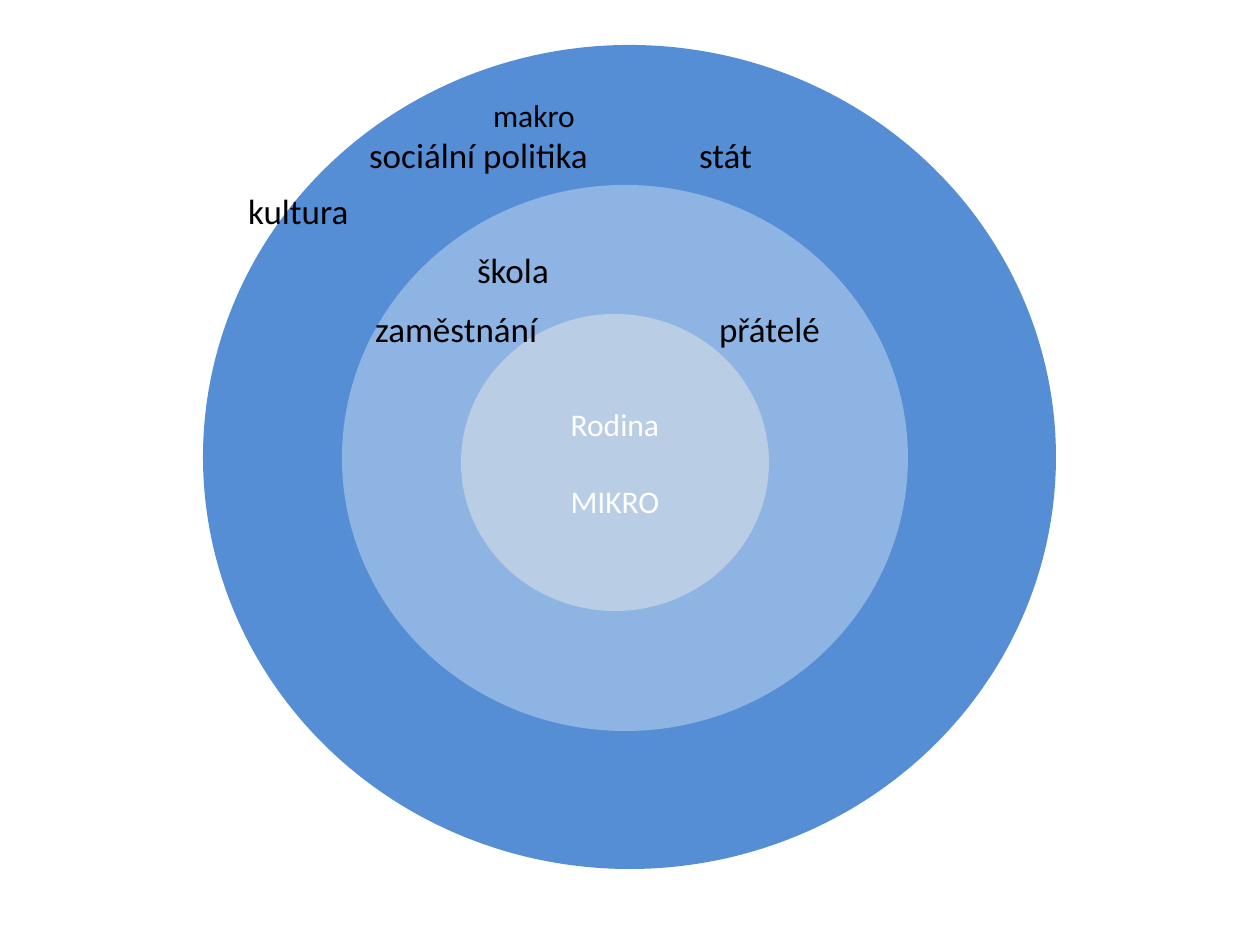
from lxml.etree import SubElement
from pptx import Presentation
from pptx.dml.color import RGBColor
from pptx.enum.shapes import MSO_SHAPE
from pptx.enum.text import MSO_ANCHOR, PP_ALIGN
from pptx.oxml.ns import qn
from pptx.util import Emu, Pt

PX_PER_INCH = 126


def px(length):
    return Emu(round(length * 914400 / PX_PER_INCH))


def color(hex_string):
    return RGBColor.from_string(hex_string)


class SlideBuilder:
    font_name = "Calibri"

    def __init__(self, slide):
        self.slide = slide

    def style(self, paragraph, size, hex_color, space_before=0):
        paragraph.space_before = Pt(space_before)
        paragraph.font.name = self.font_name
        paragraph.font.size = Pt(size)
        paragraph.font.color.rgb = color(hex_color)

    def circle(self, left, top, width, height, fill):
        circle = self.slide.shapes.add_shape(
            MSO_SHAPE.OVAL, px(left), px(top), px(width), px(height))
        circle.shadow.inherit = False
        circle.fill.solid()
        circle.fill.fore_color.rgb = color(fill)
        circle.line.fill.background()
        return circle

    def circle_label(self, circle, words, size, hex_color, gap):
        """Centre the words in the circle, one below the other, gap in points."""
        frame = circle.text_frame
        frame.vertical_anchor = MSO_ANCHOR.MIDDLE
        for index, word in enumerate(words):
            paragraph = frame.paragraphs[0] if index == 0 else frame.add_paragraph()
            paragraph.text = word
            paragraph.alignment = PP_ALIGN.CENTER
            self.style(paragraph, size, hex_color, gap if index else 0)

    def tabbed_text(self, left, top, width, height, lines, hex_color):
        """Write lines of (size, space before, {word: x on the slide})."""
        frame = self.slide.shapes.add_textbox(
            px(left), px(top), px(width), px(height)).text_frame
        frame.word_wrap = True
        frame.margin_left = frame.margin_top = 0
        for index, (size, space_before, words) in enumerate(lines):
            paragraph = frame.paragraphs[0] if index == 0 else frame.add_paragraph()
            paragraph.text = "".join("\t" + word for word in words)
            paragraph.space_before = Pt(space_before)
            tabs = SubElement(paragraph._p.get_or_add_pPr(), qn("a:tabLst"))
            for x in words.values():
                SubElement(tabs, qn("a:tab"), pos=str(px(x - left)), algn="l")
            self.style(paragraph, size, hex_color, space_before)


def main():
    presentation = Presentation()
    presentation.slide_width, presentation.slide_height = px(1260), px(945)
    builder = SlideBuilder(
        presentation.slides.add_slide(presentation.slide_layouts[6]))

    builder.circle(203, 45, 853, 824, "558ED5")
    builder.circle(342, 185, 566, 546, "8EB4E3")
    family = builder.circle(461, 314, 308, 297, "B9CDE5")
    builder.circle_label(family, ["Rodina", "MIKRO"], 18, "FFFFFF", gap=22)

    surroundings = [
        (18, 0, {"makro": 493}),
        (20, 0, {"sociální politika": 369, "stát": 699}),
        (20, 7.75, {"kultura": 248}),
        (20, 9.75, {"škola": 477}),
        (20, 9.75, {"zaměstnání": 375, "přátelé": 719}),
    ]
    builder.tabbed_text(48, 96, 1166, 260, surroundings, "000000")

    presentation.save("out.pptx")


if __name__ == "__main__":
    main()
